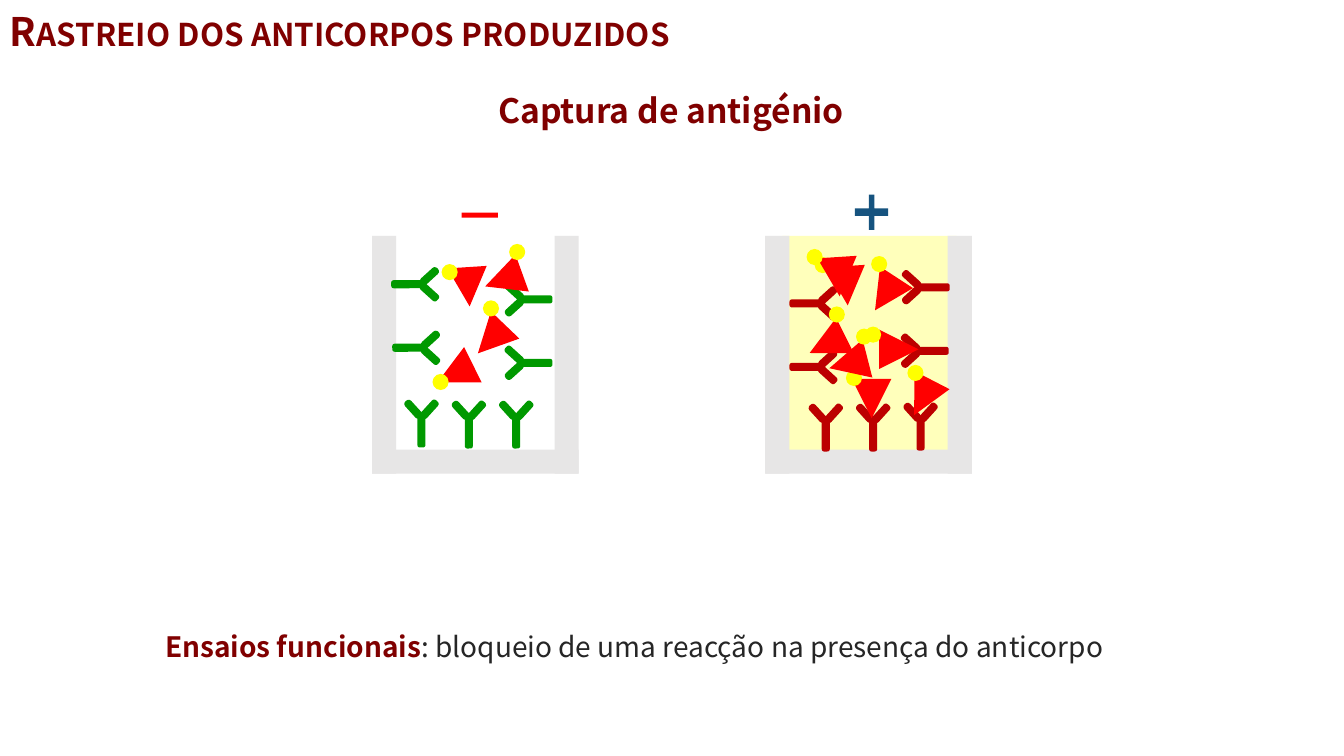
import math

from lxml import etree
from pptx import Presentation
from pptx.dml.color import RGBColor
from pptx.enum.shapes import MSO_SHAPE
from pptx.enum.text import PP_ALIGN
from pptx.oxml.ns import qn
from pptx.util import Inches, Pt

RECTANGLE = MSO_SHAPE.RECTANGLE
ROUNDED = MSO_SHAPE.ROUNDED_RECTANGLE
TRIANGLE = MSO_SHAPE.ISOSCELES_TRIANGLE
OVAL = MSO_SHAPE.OVAL
PLUS = MSO_SHAPE.CROSS
LEFT, CENTER, JUSTIFY = PP_ALIGN.LEFT, PP_ALIGN.CENTER, PP_ALIGN.JUSTIFY

FONT = "Noto Sans CJK SC"
MAROON, DARK_GREY, WALL_GREY = "800000", "262626", "E7E6E6"
GREEN, DARK_RED, RED = "009900", "BC0000", "FF0000"
YELLOW, PALE_YELLOW, BLUE = "FFFF00", "FFFF99", "16537F"

WELL_WIDTH, WELL_HEIGHT, WALL = 2.05, 2.36, 0.24
ARM_ANGLE = 42.3

# Antibodies: fork x, fork y, rotation. Antigens: triangle x, y, rotation, dot x, y.
# All measured from the top left corner of the well.
NEGATIVE_ANTIBODIES = [
    (1.43, 1.73, 0), (0.96, 1.73, 0), (0.49, 1.72, 0),
    (1.41, 1.26, 270), (1.41, 0.63, 270), (0.58, 1.11, 90), (0.57, 0.48, 90),
]
POSITIVE_ANTIBODIES = [
    (0.60, 1.76, 0), (1.07, 1.76, 0), (1.54, 1.75, 0),
    (0.62, 1.30, 90), (0.62, 0.67, 90), (1.44, 1.14, 270), (1.45, 0.51, 270),
]
NEGATIVE_ANTIGENS = [
    (0.63, 1.17, 243.5, 0.60, 1.37), (0.76, 0.31, 176.3, 0.69, 0.28),
    (1.11, 0.24, 250.1, 1.36, 0.08), (0.99, 0.83, 223.8, 1.10, 0.64),
]
POSITIVE_ANTIGENS = [
    (0.86, 1.42, 180, 0.80, 1.33), (0.42, 0.88, 243.5, 0.63, 0.70),
    (0.61, 0.30, 176.3, 0.49, 0.21), (1.13, 0.93, 90, 0.99, 0.90),
    (0.63, 1.07, 255.7, 0.90, 0.92), (0.53, 0.21, 176.3, 0.41, 0.13),
    (1.00, 0.38, 213.1, 1.05, 0.20), (1.37, 1.41, 207.3, 1.41, 1.28),
]


def rgb(color):
    return RGBColor.from_string(color)


def add_filled(slide, kind, box, color, rotation=0, adjustment=None):
    """Add a preset shape with a plain fill and no outline."""
    shape = slide.shapes.add_shape(kind, *map(Inches, box))
    shape.shadow.inherit = False
    shape.fill.solid()
    shape.fill.fore_color.rgb = rgb(color)
    shape.line.fill.background()
    shape.rotation = rotation
    if adjustment is not None:
        shape.adjustments[0] = adjustment
    return shape


def add_text(slide, box, runs, size, alignment=LEFT, line_spacing=None, small_caps=False):
    """Add one paragraph from (text, color, bold) runs."""
    frame = slide.shapes.add_textbox(*map(Inches, box)).text_frame
    frame.word_wrap = True
    paragraph = frame.paragraphs[0]
    paragraph.alignment = alignment
    paragraph.line_spacing = line_spacing
    for text, color, bold in runs:
        run = paragraph.add_run()
        run.text = text
        run.font.name = FONT
        run.font.size = Pt(size)
        run.font.bold = bold
        run.font.color.rgb = rgb(color)
        if small_caps:
            run.font._element.set("cap", "small")


def add_antibody(slide, fork_x, fork_y, rotation, color):
    """Draw a Y: a stem and two arms turned together about the fork."""
    turn = math.radians(rotation)
    parts = [
        (0, 0.215, 0.33, 0, 0.297),
        (-0.08, 0, 0.22, -ARM_ANGLE, 0.432),
        (0.08, 0, 0.22, ARM_ANGLE, 0.36),
    ]
    for x, y, length, tilt, adjustment in parts:
        center_x = fork_x + x * math.cos(turn) - y * math.sin(turn)
        center_y = fork_y + x * math.sin(turn) + y * math.cos(turn)
        box = (center_x - 0.04, center_y - length / 2, 0.08, length)
        add_filled(slide, ROUNDED, box, color, (rotation + tilt) % 360, adjustment)


def add_well(slide, left, top, antibodies, antibody_color, antigens):
    walls = [
        (left, top, WALL, WELL_HEIGHT),
        (left, top + WELL_HEIGHT - WALL, WELL_WIDTH, WALL),
        (left + WELL_WIDTH - WALL, top, WALL, WELL_HEIGHT),
    ]
    for wall in walls:
        add_filled(slide, RECTANGLE, wall, WALL_GREY)
    for x, y, rotation in antibodies:
        add_antibody(slide, left + x, top + y, rotation, antibody_color)
    for x, y, rotation, dot_x, dot_y in antigens:
        add_filled(slide, TRIANGLE, (left + x, top + y, 0.39, 0.39), RED, rotation)
        add_filled(slide, OVAL, (left + dot_x, top + dot_y, 0.16, 0.16), YELLOW)


def add_negative_well(slide, left, top):
    add_well(slide, left, top, NEGATIVE_ANTIBODIES, GREEN, NEGATIVE_ANTIGENS)
    add_filled(slide, RECTANGLE, (left + 0.89, top - 0.23, 0.36, 0.05), RED)


def add_positive_well(slide, left, top):
    liquid = add_filled(slide, RECTANGLE, (left + 0.17, top, 1.73, 2.14), PALE_YELLOW)
    color = liquid.fill._xPr.find(qn("a:solidFill"))[0]
    etree.SubElement(color, qn("a:alpha"), val="66000")
    add_well(slide, left, top, POSITIVE_ANTIBODIES, DARK_RED, POSITIVE_ANTIGENS)
    add_filled(slide, PLUS, (left + 0.89, top - 0.41, 0.33, 0.35), BLUE, adjustment=0.416)


def main():
    presentation = Presentation()
    presentation.slide_width = Inches(13.33)
    presentation.slide_height = Inches(7.5)
    slide = presentation.slides.add_slide(presentation.slide_layouts[6])

    add_positive_well(slide, 7.59, 2.34)
    add_negative_well(slide, 3.69, 2.34)
    add_text(slide, (1.54, 6.03, 10.24, 0.61), [
        ("Ensaios funcionais", MAROON, True),
        (": bloqueio de uma reacção na presença do anticorpo", DARK_GREY, False),
    ], 20, line_spacing=1.5)
    add_text(slide, (4.22, 0.84, 4.87, 0.5),
             [("Captura de antigénio", MAROON, True)], 24, CENTER)
    add_text(slide, (0, 0.02, 11.37, 0.57),
             [("Rastreio dos anticorpos produzidos", MAROON, True)], 28, JUSTIFY,
             small_caps=True)

    presentation.save("out.pptx")


if __name__ == "__main__":
    main()
